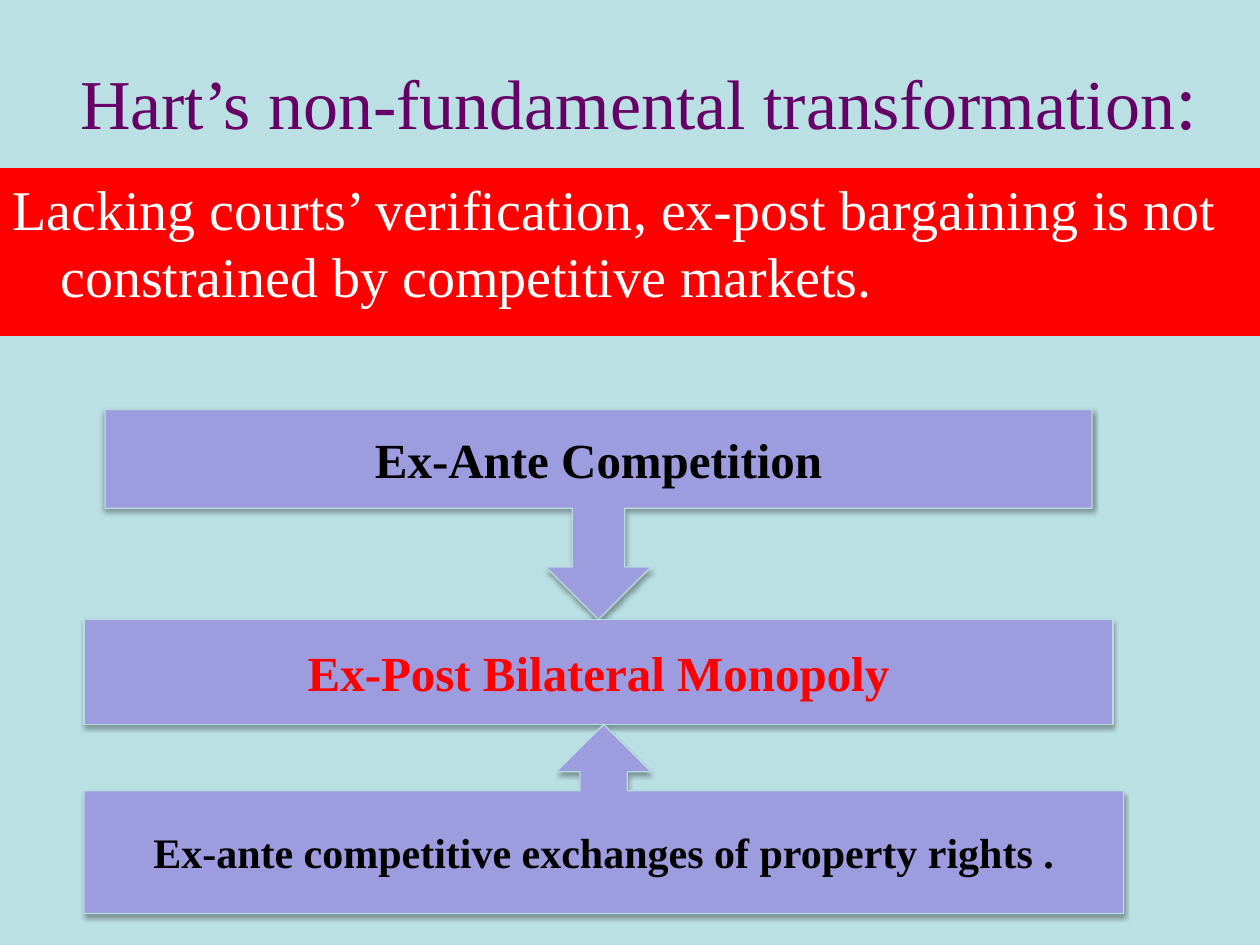
from lxml import etree
from pptx import Presentation
from pptx import util as u
from pptx.dml.color import RGBColor
from pptx.enum import shapes, text
from pptx.oxml import ns

PALE_TEAL = RGBColor(0xBB, 0xE0, 0xE3)
EDGE_TEAL = RGBColor(0xB6, 0xDC, 0xDF)
LAVENDER = RGBColor(0x9C, 0x9C, 0xDF)
PURPLE = RGBColor(0x66, 0x00, 0x66)
RED = RGBColor(0xFF, 0x00, 0x00)
WHITE = RGBColor(0xFF, 0xFF, 0xFF)
BLACK = RGBColor(0x00, 0x00, 0x00)

FONT = "Times New Roman"
COLS, ROWS = 120, 90
KIND = shapes.MSO_SHAPE
CENTER = text.PP_ALIGN.CENTER
MIDDLE = text.MSO_ANCHOR.MIDDLE


class Deck:
    def __init__(self):
        self.prs = Presentation()
        self.prs.slide_width = u.Inches(10)
        self.prs.slide_height = u.Inches(7.5)
        self.s = self.prs.slides.add_slide(self.prs.slide_layouts[6])
        fill = self.s.background.fill
        fill.solid()
        fill.fore_color.rgb = PALE_TEAL

    def box(self, col, row, cols, rows):
        dx = self.prs.slide_width / COLS
        dy = self.prs.slide_height / ROWS
        return [round(v) for v in (col * dx, row * dy, cols * dx, rows * dy)]

    def add_text(self, sp, runs, color, bold=False, align=CENTER, anchor=MIDDLE):
        tf = sp.text_frame
        tf.word_wrap = True
        tf.vertical_anchor = anchor
        p = tf.paragraphs[0]
        p.alignment = align
        for words, size in runs:
            r = p.add_run()
            r.text = words
            r.font.name = FONT
            r.font.size = u.Pt(size)
            r.font.bold = bold
            r.font.color.rgb = color
        return p

    def shape(self, kind, grid, color):
        sp = self.s.shapes.add_shape(kind, *self.box(*grid))
        sp.shadow.inherit = False
        sp.fill.solid()
        sp.fill.fore_color.rgb = color
        sp.line.fill.background()
        return sp

    def title(self, grid, runs):
        sp = self.s.shapes.add_textbox(*self.box(*grid))
        self.add_text(sp, runs, PURPLE)

    def banner(self, grid, words):
        sp = self.shape(KIND.RECTANGLE, grid, RED)
        p = self.add_text(sp, [(words, 32)], WHITE,
                          align=text.PP_ALIGN.LEFT, anchor=text.MSO_ANCHOR.TOP)
        p.space_before = u.Pt(6.4)
        pPr = p._p.get_or_add_pPr()
        pPr.set("marL", str(u.Inches(0.38)))
        pPr.set("indent", str(-u.Inches(0.38)))

    def step(self, kind, grid, words, size=28, color=BLACK, body_share=None):
        sp = self.shape(kind, grid, LAVENDER)
        sp.line.color.rgb = EDGE_TEAL
        sp.line.width = u.Pt(0.75)
        if body_share:
            sp.adjustments[3] = body_share
        self.soft_shadow(sp)
        self.add_text(sp, [(words, size)], color, bold=True)

    def soft_shadow(self, sp):
        effects = sp._element.spPr.find(ns.qn("a:effectLst"))
        shadow = etree.SubElement(
            effects, ns.qn("a:outerShdw"), blurRad=str(u.Pt(3.1)),
            dist=str(u.Pt(1.8)), dir="5400000", rotWithShape="0")
        clr = etree.SubElement(shadow, ns.qn("a:srgbClr"), val=str(BLACK))
        etree.SubElement(clr, ns.qn("a:alpha"), val="35000")


def main():
    deck = Deck()
    deck.title((0, 3, 120, 12.75),
               [(" Hart’s non-fundamental transformation", 40), (":", 45)])
    deck.banner((0, 16, 120, 16),
                "Lacking courts’ verification, ex-post bargaining is not "
                "constrained by competitive markets.")
    deck.step(KIND.DOWN_ARROW_CALLOUT, (10, 39, 94, 20),
              "Ex-Ante Competition", body_share=0.47)
    deck.step(KIND.RECTANGLE, (8, 59, 98, 10),
              "Ex-Post Bilateral Monopoly", color=RED)
    deck.step(KIND.UP_ARROW_CALLOUT, (8, 69, 99, 18),
              "Ex-ante competitive exchanges of property rights .", size=24)
    deck.prs.save("out.pptx")


if __name__ == "__main__":
    main()
